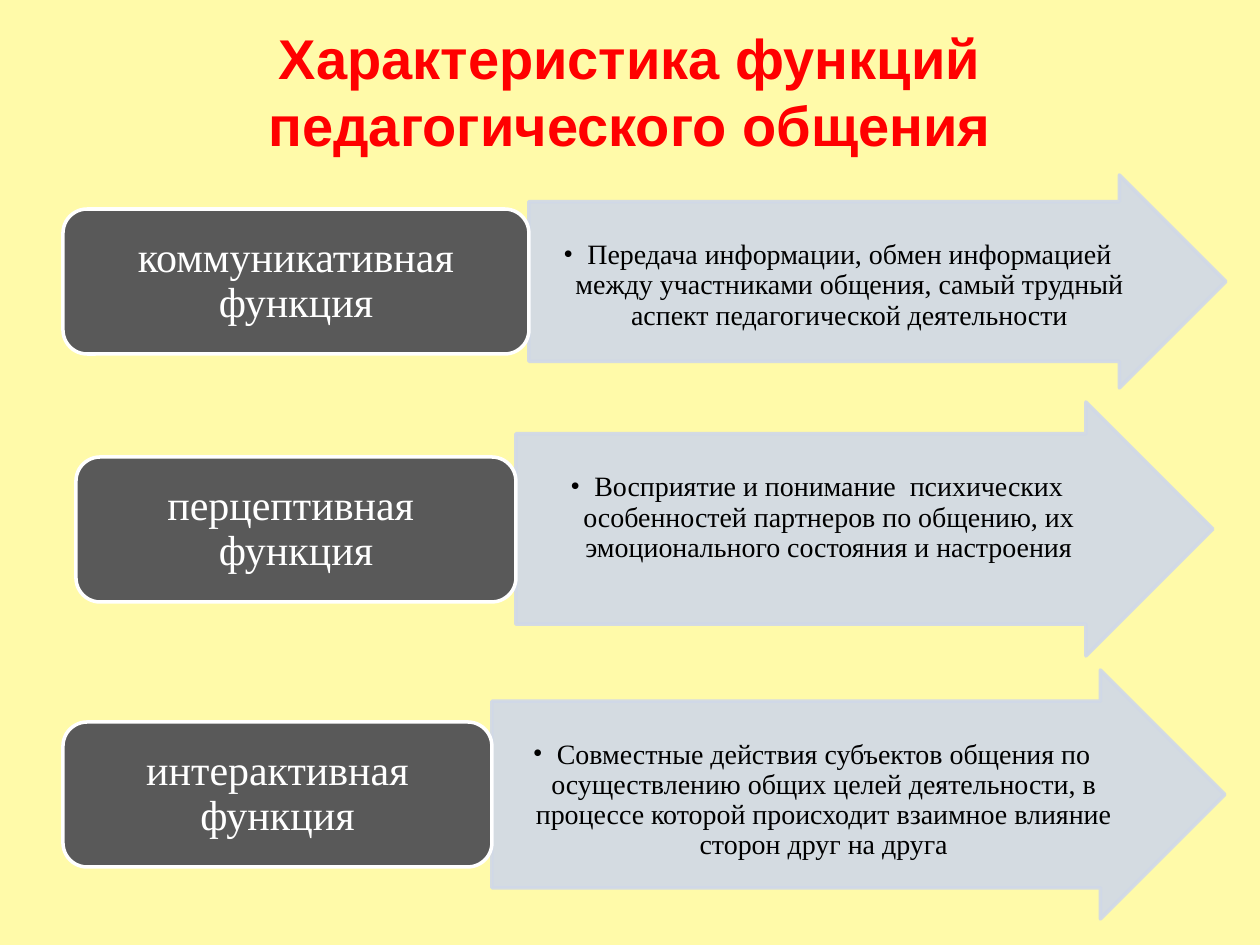
from dataclasses import dataclass

from lxml.etree import SubElement
from pptx import Presentation
from pptx.dml.color import RGBColor as Color
from pptx.enum.shapes import MSO_SHAPE as Shape
from pptx.enum.text import MSO_ANCHOR as Anchor, PP_ALIGN as Align
from pptx.oxml.ns import qn
from pptx.util import Emu, Pt

PX = 914400 // 126  # one pixel in EMU


@dataclass(frozen=True)
class Theme:
    background: str = "FFFAA9"
    title: str = "FF0000"
    arrow: str = "D0D8E8"
    label: str = "595959"
    label_text: str = "FFFFFF"
    body_text: str = "000000"
    title_font: str = "Arial"
    body_font: str = "Times New Roman"
    title_size: int = 32
    label_size: int = 24
    body_size: int = 16
    outline: int = 2
    arrow_opacity: int = 90


THEME = Theme()

# label paragraphs, label box, description, arrow box (left, top, width, height)
FUNCTIONS = [
    (["коммуникативная функция"], (63, 209, 466, 145),
     "Передача информации, обмен информацией между участниками общения, "
     "самый трудный аспект педагогической деятельности",
     (529, 175, 697, 213)),
    (["перцептивная ", "функция"], (76, 457, 440, 145),
     "Восприятие и понимание  психических особенностей партнеров по общению, "
     "их эмоционального состояния и настроения",
     (516, 402, 697, 254)),
    (["интерактивная функция"], (63, 722, 429, 145),
     "Совместные действия субъектов общения по осуществлению общих целей "
     "деятельности, в процессе которой происходит взаимное влияние сторон "
     "друг на друга",
     (492, 670, 733, 249)),
]


def px(value):
    return Emu(value * PX)


def apply(target, values):
    for name, value in values.items():
        setattr(target, name, value)


def write(frame, texts, font, color, paragraph_format):
    """Fill a text frame with equally formatted paragraphs."""
    for index, text in enumerate(texts):
        paragraph = frame.paragraphs[0] if index == 0 else frame.add_paragraph()
        paragraph.text = text
        apply(paragraph, paragraph_format)
        apply(paragraph.runs[0].font, font)
        paragraph.runs[0].font.color.rgb = Color.from_string(color)


def add_bullet(paragraph, indent):
    properties = paragraph._p.get_or_add_pPr()
    properties.set("marL", str(px(indent)))
    properties.set("indent", str(-px(indent)))
    SubElement(properties, qn("a:buFont"), typeface=THEME.body_font)
    SubElement(properties, qn("a:buChar"), char="•")


def set_opacity(shape, percent):
    for color in shape._element.spPr.iter(qn("a:srgbClr")):
        SubElement(color, qn("a:alpha"), val=str(percent * 1000))


def add_block(slide, kind, box, fill, line):
    shape = slide.shapes.add_shape(kind, *map(px, box))
    shape.shadow.inherit = False
    shape.fill.solid()
    shape.fill.fore_color.rgb = Color.from_string(fill)
    shape.line.color.rgb = Color.from_string(line)
    shape.line.width = Pt(THEME.outline)
    shape.text_frame.word_wrap = True
    return shape


def add_title(slide, text):
    title = slide.shapes.title
    apply(title, {"left": px(63), "top": px(16),
                  "width": px(1134), "height": px(149)})
    title.text_frame.vertical_anchor = Anchor.MIDDLE
    font = {"name": THEME.title_font, "size": Pt(THEME.title_size), "bold": True}
    write(title.text_frame, [text], font, THEME.title,
          {"alignment": Align.CENTER})


def add_arrow(slide, box, text):
    arrow = add_block(slide, Shape.RIGHT_ARROW, box, THEME.arrow, THEME.arrow)
    arrow.adjustments[0], arrow.adjustments[1] = 0.75, 0.5
    set_opacity(arrow, THEME.arrow_opacity)
    frame = arrow.text_frame
    apply(frame, {"margin_left": px(1), "margin_right": px(1),
                  "margin_top": px(39), "margin_bottom": px(1),
                  "vertical_anchor": Anchor.TOP})
    add_bullet(frame.paragraphs[0], 24)
    font = {"name": THEME.body_font, "size": Pt(THEME.body_size)}
    write(frame, [text], font, THEME.body_text,
          {"alignment": Align.CENTER, "line_spacing": 0.9, "level": 1})


def add_label(slide, box, texts):
    label = add_block(slide, Shape.ROUNDED_RECTANGLE, box,
                      THEME.label, THEME.label_text)
    label.text_frame.vertical_anchor = Anchor.MIDDLE
    font = {"name": THEME.body_font, "size": Pt(THEME.label_size)}
    write(label.text_frame, texts, font, THEME.label_text,
          {"alignment": Align.CENTER, "line_spacing": 0.9})


def main():
    presentation = Presentation()
    apply(presentation, {"slide_width": px(1260), "slide_height": px(945)})
    slide = presentation.slides.add_slide(presentation.slide_layouts[5])

    # Background and title
    slide.background.fill.solid()
    slide.background.fill.fore_color.rgb = Color.from_string(THEME.background)
    add_title(slide, "Характеристика функций педагогического общения")

    # One arrow with its label per function
    for label, label_box, description, arrow_box in FUNCTIONS:
        add_arrow(slide, arrow_box, description)
        add_label(slide, label_box, label)

    presentation.save("out.pptx")


if __name__ == "__main__":
    main()
